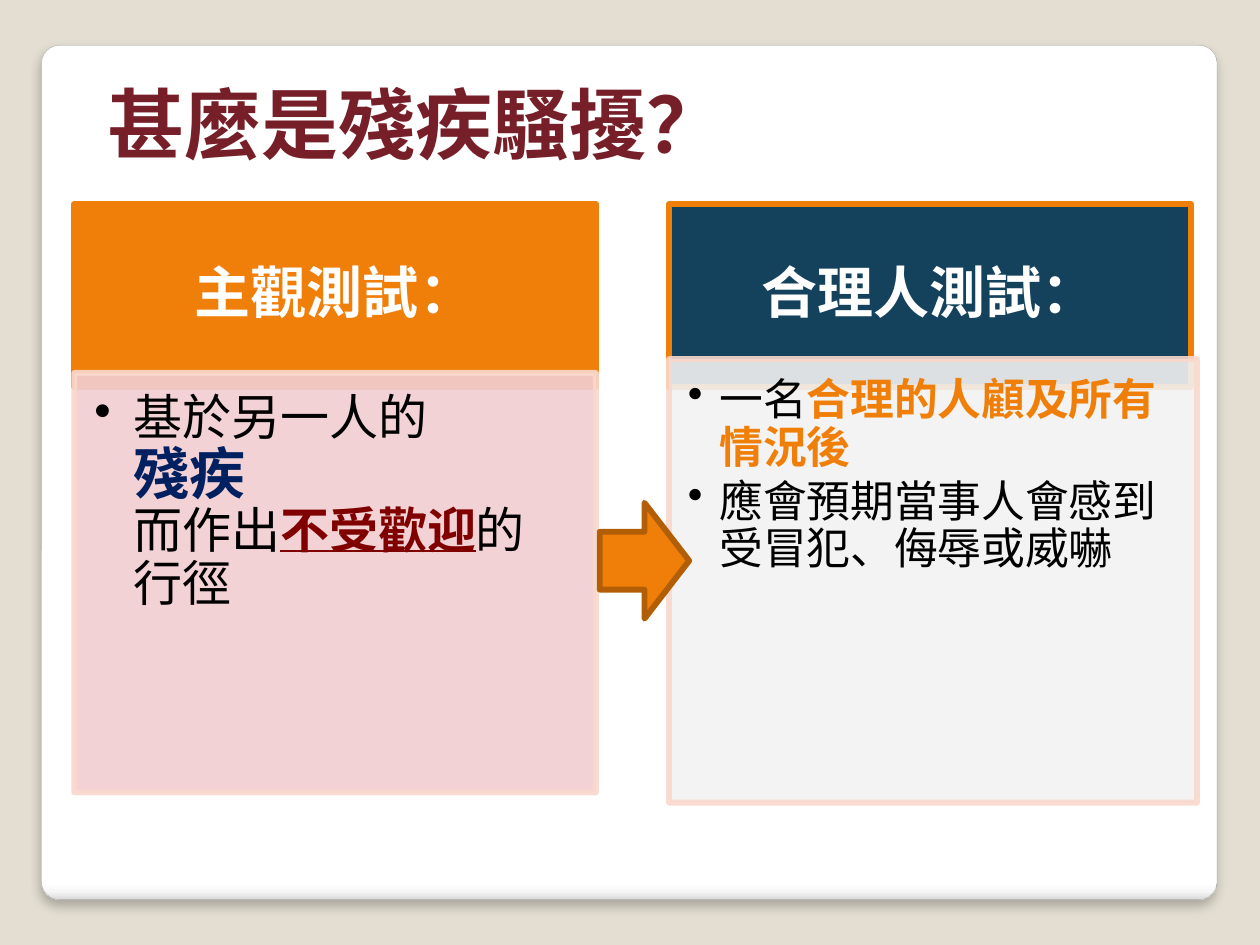
"""Build a slide on the two tests for disability harassment."""
from lxml import etree
from pptx import Presentation
from pptx.dml.color import RGBColor
from pptx.enum.shapes import MSO_SHAPE
from pptx.enum.text import MSO_ANCHOR, PP_ALIGN
from pptx.oxml import parse_xml
from pptx.oxml.ns import nsdecls, qn
from pptx.util import Inches, Pt

BEIGE = RGBColor(0xE3, 0xDE, 0xD1)
GREY = RGBColor(0xA4, 0xA4, 0xA4)
WINE = RGBColor(0x77, 0x1F, 0x28)
ORANGE = RGBColor(0xF0, 0x7F, 0x09)
BROWN = RGBColor(0xB2, 0x5E, 0x07)
TEAL = RGBColor(0x14, 0x42, 0x5D)
PINK = RGBColor(0xF2, 0xCE, 0xD2)
PALE = RGBColor(0xF2, 0xF2, 0xF2)
PEACH = RGBColor(0xF9, 0xD8, 0xCC)
WHITE = RGBColor(0xFF, 0xFF, 0xFF)
BLACK = RGBColor(0, 0, 0)
NAVY = RGBColor(0, 0x20, 0x60)
MAROON = RGBColor(0x80, 0, 0)


def add_box(kind, place, fill, line, width=3.35, alpha=100):
    box = slide.shapes.add_shape(kind, *[Inches(n) for n in place])
    box.shadow.inherit = False
    box.fill.solid()
    box.fill.fore_color.rgb = fill
    box.line.color.rgb = line
    box.line.width = Pt(width)
    if alpha < 100:
        for color in box._element.spPr.iter(qn("a:srgbClr")):
            etree.SubElement(color, qn("a:alpha"), val=str(alpha * 1000))
    return box


def set_font(para, name, size, color, bold=False):
    font = para.font
    font.name, font.size, font.bold = name, Pt(size), bold
    font.color.rgb = color
    base = para._p.pPr.find(qn("a:defRPr"))
    base.find(qn("a:latin")).addnext(
        parse_xml(f'<a:ea {nsdecls("a")} typeface="{name}"/>'))


deck = Presentation()
deck.slide_width, deck.slide_height = Inches(10), Inches(7.5)
slide = deck.slides.add_slide(deck.slide_layouts[5])
slide.background.fill.solid()
slide.background.fill.fore_color.rgb = BEIGE

card = add_box(MSO_SHAPE.ROUNDED_RECTANGLE, (0.33, 0.36, 9.33, 6.78), WHITE, GREY, 0.16)
card.adjustments[0] = 0.021
card.fill.gradient()
card.fill.gradient_angle = 270
stops = card._element.spPr.find(qn("a:gradFill")).find(qn("a:gsLst"))
for stop in list(stops):
    stops.remove(stop)
for spot, shade in [(0, "FFFFFF"), (98, "FFFFFF"), (99, "F7F7F7"), (100, "DADADA")]:
    stop = etree.SubElement(stops, qn("a:gs"), pos=str(spot * 1000))
    etree.SubElement(stop, qn("a:srgbClr"), val=shade)
card._element.spPr.find(qn("a:effectLst")).append(parse_xml(
    f'<a:outerShdw {nsdecls("a")} blurRad="{Pt(6)}" dist="{Pt(4)}" dir="5400000"'
    ' algn="tl" rotWithShape="0"><a:srgbClr val="000000">'
    '<a:alpha val="25000"/></a:srgbClr></a:outerShdw>'))
slide.shapes._spTree.insert(2, card._element)

title = slide.shapes.title
title.left, title.top = Inches(0.75), Inches(0.52)
title.width, title.height = Inches(7.42), Inches(0.87)
title.text_frame.text = "甚麼是殘疾騷擾？"
title.text_frame.vertical_anchor = MSO_ANCHOR.BOTTOM
para = title.text_frame.paragraphs[0]
para.alignment = PP_ALIGN.LEFT
set_font(para, "Noto Sans CJK TC", 44, WINE, True)

left_list = [[("基於另一人的\n", 28, BLACK, False), ("殘疾\n", 32, NAVY, True),
              ("而作出", 28, BLACK, False), ("不受歡迎", 28, MAROON, True),
              ("的行徑", 28, BLACK, False)]]
right_list = [[("一名", 25, BLACK, False), ("合理的人顧及所有情況後", 25, ORANGE, True)],
              [("應會預期當事人會感到受冒犯、侮辱或威嚇", 25, BLACK, False)]]
tests = [
    (0.59, "主觀測試：", ORANGE, (2.96, 4.14, 3.33), PINK, (0.16, 0.16, 0.22, 0.24), 0.31, left_list),
    (5.31, "合理人測試：", TEAL, (2.85, 4.19, 3.52), PALE, (0.15, 0.15, 0.19, 0.22), 0.25, right_list),
]
for left, name, tint, (top, width, height), wash, pads, indent, items in tests:
    head = add_box(MSO_SHAPE.RECTANGLE, (left, 1.62, 4.14, 1.45), tint, ORANGE)
    body = add_box(MSO_SHAPE.RECTANGLE, (left, top, width, height), wash, PEACH, alpha=90)
    for box, sides in [(head, (0.25, 0.14, 0.25, 0.14)), (body, pads)]:
        frame = box.text_frame
        frame.word_wrap = True
        (frame.margin_left, frame.margin_top,
         frame.margin_right, frame.margin_bottom) = [Inches(n) for n in sides]

    head.text_frame.text = name
    head.text_frame.vertical_anchor = MSO_ANCHOR.MIDDLE
    para = head.text_frame.paragraphs[0]
    para.alignment = PP_ALIGN.CENTER
    para.line_spacing = 0.9
    set_font(para, "DejaVu Sans", 32, WHITE, True)

    frame = body.text_frame
    frame.vertical_anchor = MSO_ANCHOR.TOP
    for row, parts in enumerate(items):
        para = frame.add_paragraph() if row else frame.paragraphs[0]
        props = para._p.get_or_add_pPr()
        props.set("marL", str(Inches(indent)))
        props.set("indent", str(-Inches(indent)))
        etree.SubElement(props, qn("a:buChar"), char="•")
        para.alignment = PP_ALIGN.LEFT
        para.line_spacing = 0.9
        para.space_after = Pt(4)
        set_font(para, "DejaVu Sans", parts[0][1], BLACK)
        for words, size, color, bold in parts:
            run = para.add_run()
            run.text = words.strip()
            run.font.size, run.font.bold = Pt(size), bold
            run.font.color.rgb = color
            if color == MAROON:
                run.font.underline = True
            if words.endswith("\n"):
                para.add_line_break()

add_box(MSO_SHAPE.RIGHT_ARROW, (4.76, 3.99, 0.71, 0.92), ORANGE, BROWN)
deck.save("out.pptx")
